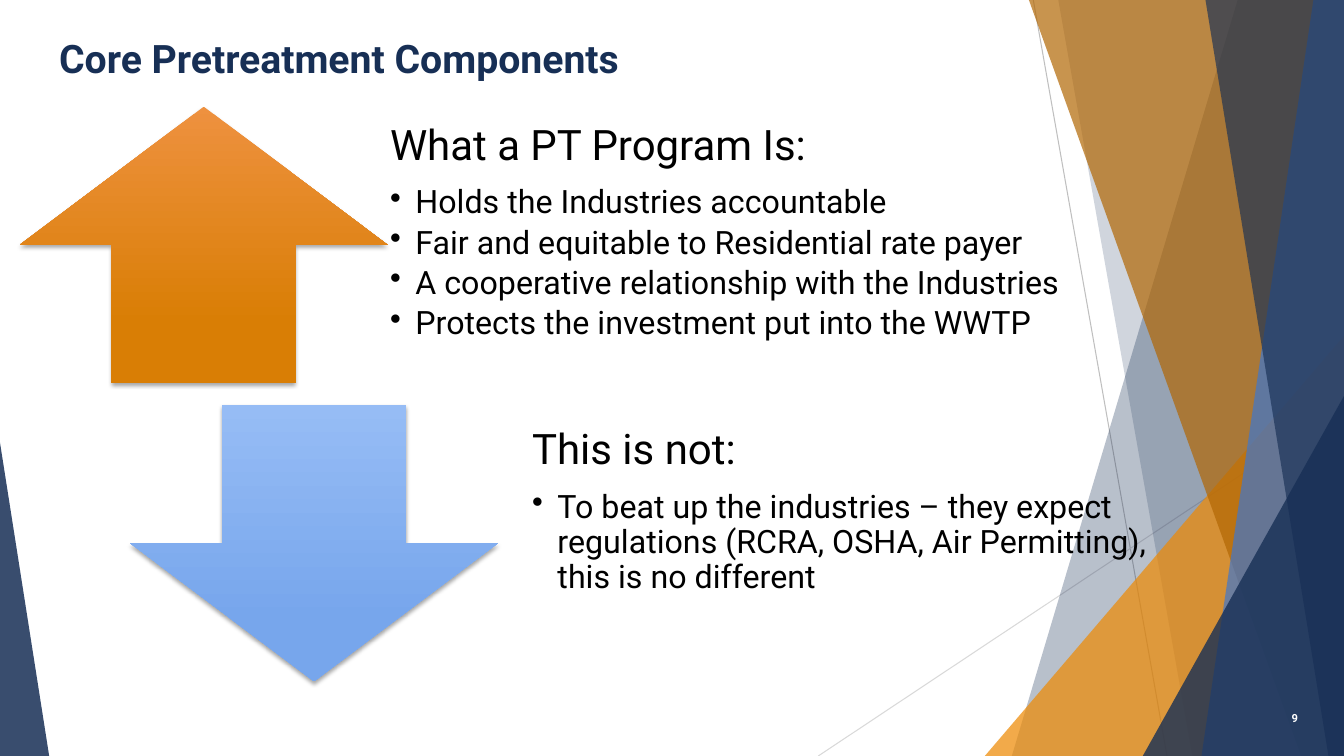
from lxml.etree import SubElement
from pptx import Presentation
from pptx.dml.color import RGBColor
from pptx.enum.shapes import MSO_CONNECTOR, MSO_SHAPE
from pptx.enum.text import MSO_ANCHOR, PP_ALIGN
from pptx.oxml.ns import qn
from pptx.util import Cm, Pt

WIDTH, HEIGHT = 33.87, 19.05
NAVY = "172F55"


def color(value):
    return RGBColor.from_string(value)


def add_text_box(box, frame_format, lines):
    """Each line is text, font format, paragraph format and bullet indent in cm."""
    frame = slide.shapes.add_textbox(*map(Cm, box)).text_frame
    for name, value in frame_format.items():
        setattr(frame, name, value)
    for index, (text, font_format, paragraph_format, indent) in enumerate(lines):
        paragraph = frame.add_paragraph() if index else frame.paragraphs[0]
        for name, value in paragraph_format.items():
            setattr(paragraph, name, value)
        if indent:
            properties = paragraph._p.get_or_add_pPr()
            properties.set("marL", str(Cm(indent)))
            properties.set("indent", str(-Cm(indent)))
            SubElement(properties, qn("a:buChar"), char="•")
        run = paragraph.add_run()
        run.text = text
        run.font.name = "Roboto"
        run.font.color.rgb = color(font_format["color"])
        run.font.size = Pt(font_format["size"])
        run.font.bold = font_format["bold"]


presentation = Presentation()
presentation.slide_width, presentation.slide_height = Cm(WIDTH), Cm(HEIGHT)
slide = presentation.slides.add_slide(presentation.slide_layouts[6])

# Thin background lines
for ends, line_color in [
    ((26.04, 0, 29.41, HEIGHT), "BFBFBF"),
    ((WIDTH, 10.24, 20.62, HEIGHT), "D9D9D9"),
]:
    connector = slide.shapes.add_connector(MSO_CONNECTOR.STRAIGHT, *map(Cm, ends))
    connector.line.color.rgb = color(line_color)
    connector.line.width = Pt(0.75)
    SubElement(connector._element.spPr, qn("a:effectLst"))

# Translucent facets: bands give the top and bottom of their left edge,
# triangles give left, top, width and apex position
facets = [
    ((31.19, 25.5), NAVY, 30),
    ((26.67, 30.05), NAVY, 20),
    ((24.82, 8.46, 9.05, 1), "ED8A05", 72),
    ((25.93, 32.79), "B26704", 70),
    ((33.1, 30.28), "4177CC", 70),
    ((30.38, 33.48), NAVY, 65),
    ((28.8, 9.98, 5.07, 1), NAVY, 80),
    ((0, 11.15, 1.24, 0), NAVY, 85),
]
for geometry, fill_color, opacity in facets:
    if len(geometry) == 2:
        top_x, bottom_x = geometry
        builder = slide.shapes.build_freeform(Cm(top_x), 0)
        corners = [(WIDTH, 0), (WIDTH, HEIGHT), (bottom_x, HEIGHT)]
        builder.add_line_segments([(Cm(x), Cm(y)) for x, y in corners], close=True)
        facet = builder.convert_to_shape()
    else:
        left, top, width, apex = geometry
        facet = slide.shapes.add_shape(
            MSO_SHAPE.ISOSCELES_TRIANGLE, Cm(left), Cm(top), Cm(width), Cm(HEIGHT - top)
        )
        facet.adjustments[0] = apex
    facet.shadow.inherit = False
    facet.line.fill.background()
    facet.fill.solid()
    facet.fill.fore_color.rgb = color(fill_color)
    fill_element = facet._element.spPr.find(qn("a:solidFill"))[0]
    SubElement(fill_element, qn("a:alpha"), val=str(opacity * 1000))

# Arrows with their headings and bullets
sections = [
    (MSO_SHAPE.UP_ARROW, (0.5, 2.69), ("EE913F", "D97E05"),
     (9.25, 3, 18.59, 6.32), 0.58, "What a PT Program Is:",
     ["Holds the Industries accountable",
      "Fair and equitable to Residential rate payer",
      "A cooperative relationship with the Industries",
      "Protects the investment put into the WWTP"]),
    (MSO_SHAPE.DOWN_ARROW, (3.28, 10.21), ("96BCF5", "77A6EC"),
     (12.83, 10.21, 16.97, 6.96), 1.58, "This is not:",
     ["To beat up the industries – they expect regulations "
      "(RCRA, OSHA, Air Permitting), this is no different"]),
]
heading_font = {"size": 30, "color": "000000", "bold": False}
bullet_font = {"size": 23, "color": "000000", "bold": False}
heading_paragraph = {"line_spacing": 0.9, "space_after": Pt(12)}
bullet_paragraph = {"line_spacing": 0.9, "space_after": Pt(4)}

for kind, position, gradient, box, bottom_margin, heading, bullets in sections:
    arrow = slide.shapes.add_shape(kind, *map(Cm, position), Cm(9.27), Cm(6.96))
    arrow.line.fill.background()
    arrow.fill.gradient()
    arrow.fill.gradient_angle = 270
    for stop, stop_color, place in zip(arrow.fill.gradient_stops, gradient, (0, 0.78)):
        stop.color.rgb = color(stop_color)
        stop.position = place
    arrow.shadow.inherit = False
    effects = arrow._element.spPr.find(qn("a:effectLst"))
    shadow = SubElement(
        effects, qn("a:outerShdw"), blurRad=str(Pt(3)), dist=str(Pt(2)),
        dir="5400000", rotWithShape="0",
    )
    shadow_color = SubElement(shadow, qn("a:srgbClr"), val="000000")
    SubElement(shadow_color, qn("a:alpha"), val="35000")

    frame_format = {
        "word_wrap": True, "vertical_anchor": MSO_ANCHOR.MIDDLE,
        "margin_left": Cm(0.58), "margin_top": 0,
        "margin_right": Cm(0.58), "margin_bottom": Cm(bottom_margin),
    }
    lines = [(heading, heading_font, heading_paragraph, 0)]
    lines += [(bullet, bullet_font, bullet_paragraph, 0.64) for bullet in bullets]
    add_text_box(box, frame_format, lines)

# Title and slide number
add_text_box(
    (1.24, 0.74, 26.11, 1.27), {"word_wrap": True},
    [("Core Pretreatment Components", {"size": 28, "color": NAVY, "bold": True}, {}, 0)],
)
add_text_box(
    (31.06, 17.58, 1.9, 1.02),
    {"word_wrap": True, "vertical_anchor": MSO_ANCHOR.MIDDLE},
    [("9", {"size": 8, "color": "FFFFFF", "bold": True}, {"alignment": PP_ALIGN.RIGHT}, 0)],
)

presentation.save("out.pptx")
